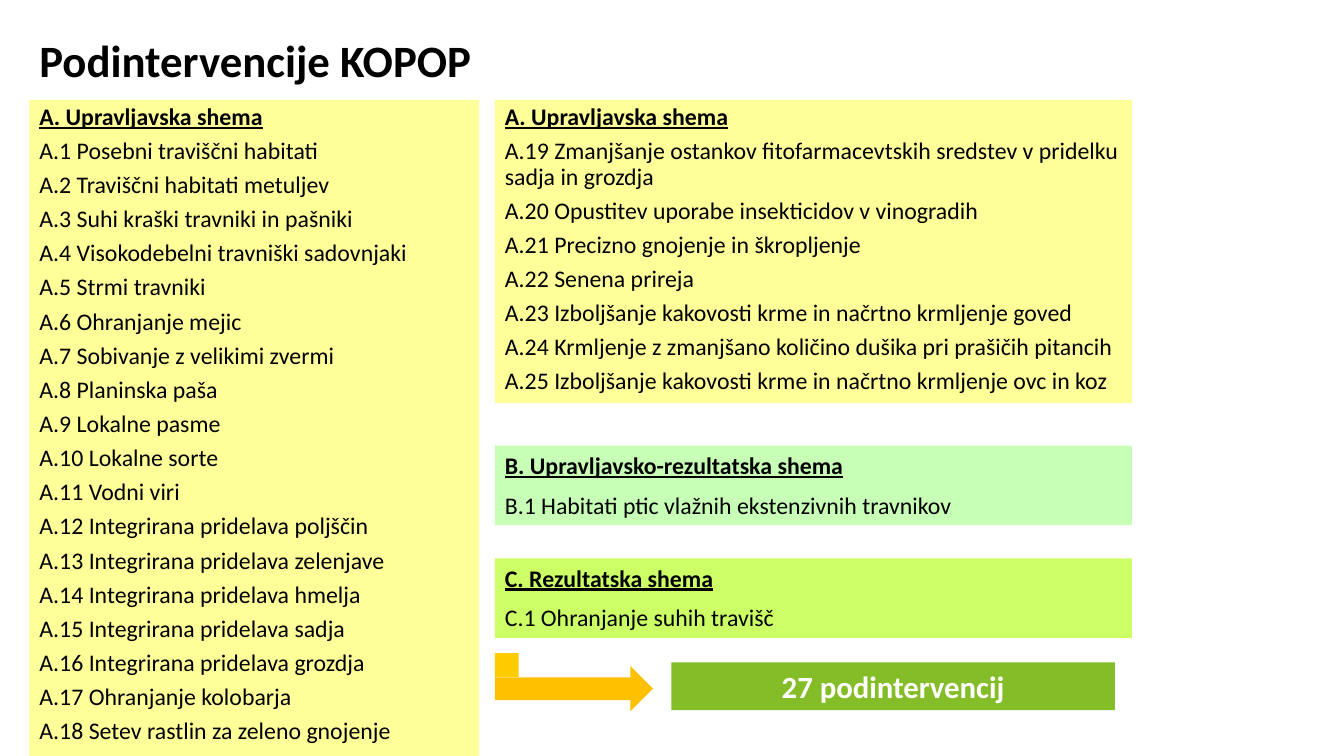
"""Build the slide listing the KOPOP subinterventions by scheme."""
from pptx import Presentation
from pptx.dml.color import RGBColor
from pptx.enum.shapes import MSO_SHAPE
from pptx.enum.text import MSO_ANCHOR, MSO_AUTO_SIZE, PP_ALIGN
from pptx.util import Pt


def color(code):
    return RGBColor.from_string(code)


def apply(target, values):
    for name, value in values.items():
        setattr(target, name, value)


class Deck:
    face = "Calibri"
    ink = "000000"
    size = 17
    head = {"bold": True, "underline": True}
    tight = {"line_spacing": 0.9, "space_after": Pt(6)}
    loose = {"space_after": Pt(8)}

    def __init__(self, width, height):
        self.show = Presentation()
        apply(self.show, {"slide_width": Pt(width), "slide_height": Pt(height)})
        self.slide = self.show.slides.add_slide(self.show.slide_layouts[6])

    def line(self, para, text, font, layout, ink=ink):
        para.text = text
        apply(para, layout)
        apply(para.font, {"name": self.face, "size": Pt(self.size), **font})
        para.font.color.rgb = color(ink)

    def title(self, box, text):
        frame = self.slide.shapes.add_textbox(*map(Pt, box)).text_frame
        frame.word_wrap = True
        self.line(frame.paragraphs[0], text, {"size": Pt(32), "bold": True}, {})

    def shape(self, kind, box, fill):
        shape = self.slide.shapes.add_shape(kind, *map(Pt, box))
        shape.shadow.inherit = False
        shape.fill.solid()
        shape.fill.fore_color.rgb = color(fill)
        shape.line.fill.background()
        return shape

    def block(self, box, fill):
        frame = self.shape(MSO_SHAPE.RECTANGLE, box, fill).text_frame
        apply(frame, {"word_wrap": True, "vertical_anchor": MSO_ANCHOR.TOP,
                      "auto_size": MSO_AUTO_SIZE.SHAPE_TO_FIT_TEXT})
        return frame

    def panel(self, box, fill, head, items, layout):
        frame = self.block(box, fill)
        left = {"alignment": PP_ALIGN.LEFT}
        self.line(frame.paragraphs[0], head, self.head, {**left, **layout})
        for item in items:
            after = layout if layout is self.tight else {}
            self.line(frame.add_paragraph(), item, {}, {**left, **after})

    def total(self, box, fill, text):
        frame = self.block(box, fill)
        self.line(frame.paragraphs[0], text, {"size": Pt(22), "bold": True},
                  {"alignment": PP_ALIGN.CENTER}, "FFFFFF")


FIRST = [
    "Posebni traviščni habitati",
    "Traviščni habitati metuljev",
    "Suhi kraški travniki in pašniki",
    "Visokodebelni travniški sadovnjaki",
    "Strmi travniki",
    "Ohranjanje mejic",
    "Sobivanje z velikimi zvermi",
    "Planinska paša",
    "Lokalne pasme",
    "Lokalne sorte",
    "Vodni viri",
    "Integrirana pridelava poljščin",
    "Integrirana pridelava zelenjave",
    "Integrirana pridelava hmelja",
    "Integrirana pridelava sadja",
    "Integrirana pridelava grozdja",
    "Ohranjanje kolobarja",
    "Setev rastlin za zeleno gnojenje",
]
SECOND = [
    "Zmanjšanje ostankov fitofarmacevtskih sredstev v pridelku sadja in grozdja",
    "Opustitev uporabe insekticidov v vinogradih",
    "Precizno gnojenje in škropljenje",
    "Senena prireja",
    "Izboljšanje kakovosti krme in načrtno krmljenje goved",
    "Krmljenje z zmanjšano količino dušika pri prašičih pitancih",
    "Izboljšanje kakovosti krme in načrtno krmljenje ovc in koz",
]
LEFT, RIGHT, TOP, WIDE = 21, 353.5, 71.3, 455


def number(items, start):
    return [f"A.{index} {item}" for index, item in enumerate(items, start)]


def main():
    deck = Deck(960, 540)
    deck.title((LEFT, 19.5, 891.5, 62.5), "Podintervencije KOPOP")
    head = "A. Upravljavska shema"
    deck.panel((LEFT, TOP, 321.2, 468.7), "FFFF99", head,
               number(FIRST, 1), deck.tight)
    deck.panel((RIGHT, 318.3, WIDE, 56.8), "C8FFB7",
               "B. Upravljavsko-rezultatska shema",
               ["B.1 Habitati ptic vlažnih ekstenzivnih travnikov"], deck.loose)
    deck.panel((RIGHT, 398.9, WIDE, 56.8), "CCFF66", "C. Rezultatska shema",
               ["C.1 Ohranjanje suhih travišč"], deck.loose)
    deck.panel((RIGHT, TOP, WIDE, 216.7), "FFFF99", head,
               number(SECOND, len(FIRST) + 1), deck.tight)
    deck.total((479.6, 473.2, 316.8, 34), "84BD27", "27 podintervencij")
    deck.shape(MSO_SHAPE.RIGHT_ARROW, (RIGHT, 475.7, 113, 32.4), "FFC000")
    deck.shape(MSO_SHAPE.RECTANGLE, (RIGHT, 466.5, 17, 17.3), "FFCC00")
    deck.show.save("out.pptx")


if __name__ == "__main__":
    main()
